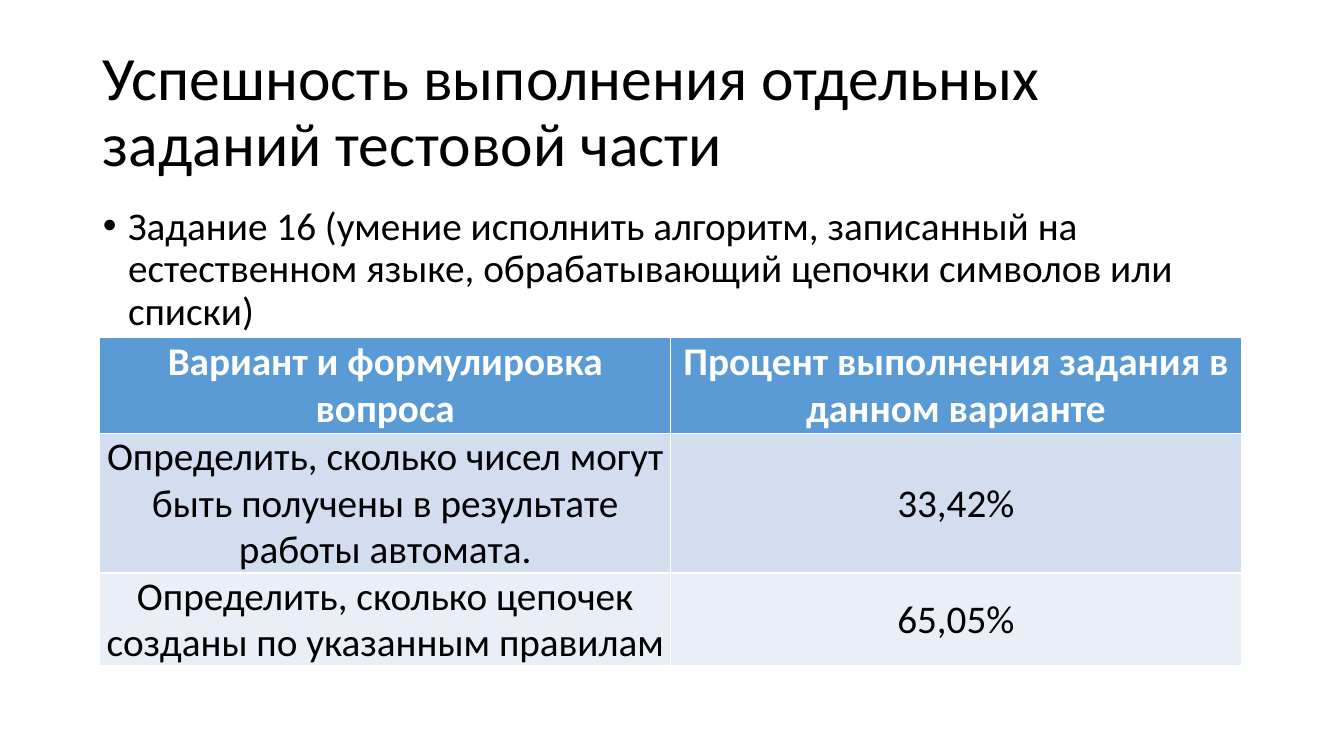
"""Build a slide with the success rates for exam task 16."""
from pptx import Presentation
from pptx.dml.color import RGBColor
from pptx.enum.text import MSO_ANCHOR, MSO_AUTO_SIZE, PP_ALIGN
from pptx.util import Inches, Pt

COLORS = {
    "text": "000000",
    "header_text": "FFFFFF",
    "header": "5B9BD5",
    "odd_row": "D2DEEF",
    "even_row": "EAEFF7",
}
ROWS = [
    ("Вариант и формулировка вопроса", "Процент выполнения задания в данном варианте"),
    ("Определить, сколько чисел могут быть получены в результате работы автомата.", "33,42%"),
    ("Определить, сколько цепочек созданы по указанным правилам", "65,05%"),
]
ROW_FILLS = ["header", "odd_row", "even_row"]
ROW_HEIGHTS = [0.94, 1.38, 0.92]
COLUMN_WIDTH = 5.66


def format_text(frame, size, color, align, line_spacing, bold=False):
    for para in frame.paragraphs:
        para.alignment = align
        para.line_spacing = line_spacing
        for span in para.runs:
            span.font.name = "Calibri"
            span.font.size = Pt(size)
            span.font.bold = bold
            span.font.color.rgb = RGBColor.from_string(COLORS[color])


def place(box, left, top, width, height):
    box.left, box.top = Inches(left), Inches(top)
    box.width, box.height = Inches(width), Inches(height)
    box.text_frame.auto_size = MSO_AUTO_SIZE.NONE


deck = Presentation()
deck.slide_width, deck.slide_height = Inches(13.33), Inches(7.5)
page = deck.slides.add_slide(deck.slide_layouts[1])

title = page.shapes.title
place(title, 0.92, 0.4, 11.5, 1.45)
title.text_frame.text = "Успешность выполнения отдельных заданий тестовой части"
title.text_frame.vertical_anchor = MSO_ANCHOR.MIDDLE
format_text(title.text_frame, 44, "text", PP_ALIGN.LEFT, 0.9)

body = page.placeholders[1]
place(body, 0.92, 2, 11.5, 4.76)
body.text_frame.text = (
    "Задание 16 (умение исполнить алгоритм, записанный на естественном языке, "
    "обрабатывающий цепочки символов или списки)"
)
format_text(body.text_frame, 28, "text", PP_ALIGN.LEFT, 0.9)
bullet = body.text_frame.paragraphs[0]
bullet.space_before = Pt(10)
bullet_properties = bullet._p.get_or_add_pPr()
bullet_properties.set("marL", str(Inches(0.25)))
bullet_properties.set("indent", str(Inches(-0.25)))

table = page.shapes.add_table(
    len(ROWS), 2, Inches(0.99), Inches(3.35),
    Inches(2 * COLUMN_WIDTH), Inches(sum(ROW_HEIGHTS)),
).table
for column in table.columns:
    column.width = Inches(COLUMN_WIDTH)

for row, texts, fill, height in zip(table.rows, ROWS, ROW_FILLS, ROW_HEIGHTS):
    row.height = Inches(height)
    is_header = fill == "header"
    for cell, text in zip(row.cells, texts):
        cell.text_frame.text = text
        cell.vertical_anchor = MSO_ANCHOR.MIDDLE
        cell.margin_left = cell.margin_right = Inches(0.05)
        cell.margin_top = cell.margin_bottom = Inches(0)
        cell.fill.solid()
        cell.fill.fore_color.rgb = RGBColor.from_string(COLORS[fill])
        format_text(
            cell.text_frame, 28, "header_text" if is_header else "text",
            PP_ALIGN.CENTER, 1.0 if is_header else 0.97, is_header,
        )

deck.save("out.pptx")
